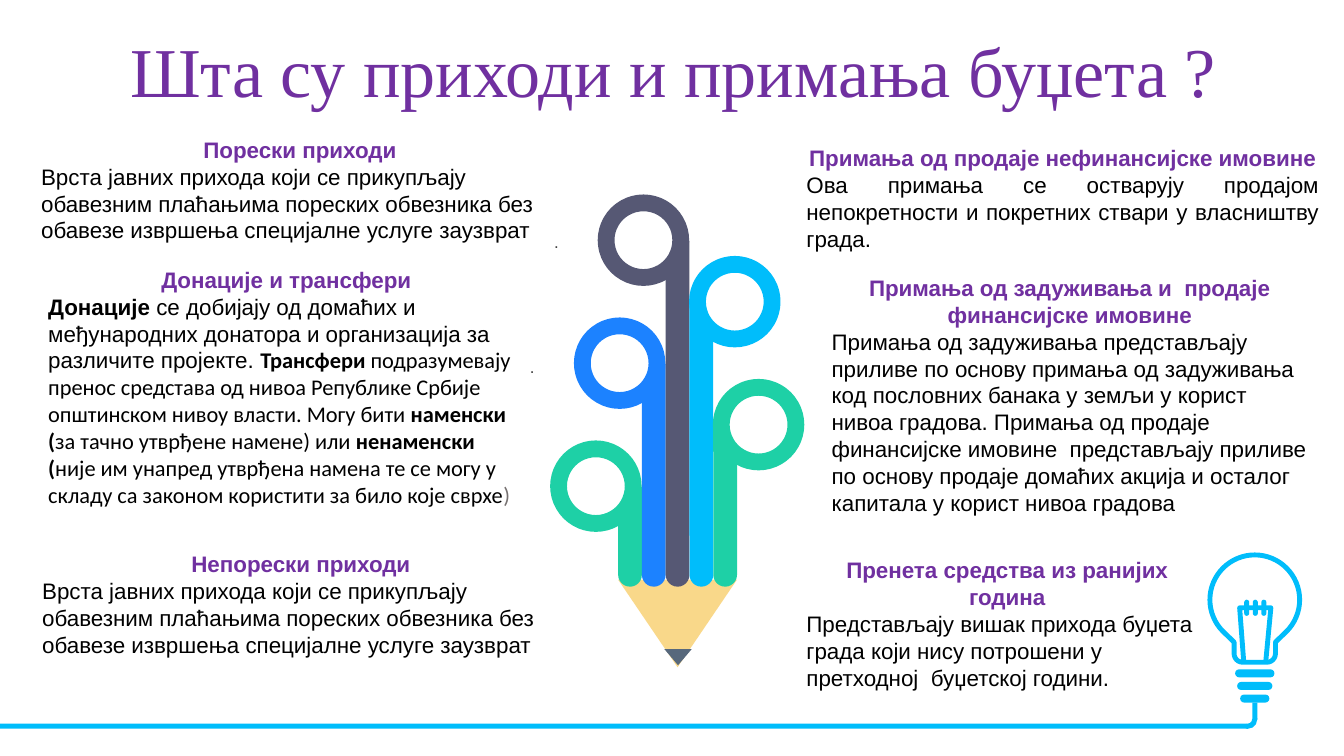
from dataclasses import dataclass
from math import cos, radians, sin

from lxml.etree import SubElement
from pptx import Presentation
from pptx.dml.color import RGBColor
from pptx.enum.shapes import MSO_SHAPE as Preset
from pptx.enum.text import MSO_ANCHOR as Anchor, PP_ALIGN as Align
from pptx.oxml.ns import qn
from pptx.util import Inches, Pt


@dataclass(frozen=True)
class Theme:
    purple: str = "7030A0"
    black: str = "000000"
    grey: str = "767171"
    dot: str = "404040"
    white: str = "FFFFFF"
    cyan: str = "00BDFB"
    blue: str = "1C82FF"
    green: str = "1ED0A6"
    slate: str = "565874"
    wood: str = "F5B317"
    lead: str = "57687C"
    title_font: str = "Times New Roman"
    body_font: str = "Arial"
    alt_font: str = "Calibri"
    title_size: float = 50
    body_size: float = 16
    dot_size: float = 12
    ring_width: float = 12
    bulb_width: float = 3.5


def write(para, text, font, size, color, bold=False):
    span = para.add_run()
    span.text = text
    span.font.name = font
    span.font.size = Pt(size)
    span.font.bold = bold
    span.font.color.rgb = RGBColor.from_string(color)


def arc(center_x, center_y, radius, start, end, steps):
    angles = [radians(start + (end - start) * i / steps) for i in range(steps + 1)]
    return [(center_x + radius * cos(a), center_y + radius * sin(a)) for a in angles]


class Painter:
    cell = Inches(0.1)

    def __init__(self, deck, theme):
        self.theme = theme
        self.page = deck.slides.add_slide(deck.slide_layouts[6])

    def grid(self, *cells):
        return [round(value * self.cell) for value in cells]

    def style(self, shape, fill=None, line=None, width=0):
        shape.shadow.inherit = False
        if fill:
            shape.fill.solid()
            shape.fill.fore_color.rgb = RGBColor.from_string(fill)
        else:
            shape.fill.background()
        if line:
            shape.line.color.rgb = RGBColor.from_string(line)
            shape.line.width = Pt(width)
        else:
            shape.line.fill.background()
        return shape

    def shape(self, preset, place, fill, line=None, width=0, turn=0, adjust=()):
        shape = self.page.shapes.add_shape(preset, *self.grid(*place))
        shape.rotation = turn
        for index, value in enumerate(adjust):
            shape.adjustments[index] = value
        return self.style(shape, fill, line, width)

    def outline(self, points, line, width, fill=None, close=True):
        start, *rest = [self.grid(*point) for point in points]
        builder = self.page.shapes.build_freeform(*start)
        builder.add_line_segments(rest, close=close)
        shape = self.style(builder.convert_to_shape(), fill, line, width)
        if not close:
            shape.line._get_or_add_ln().set("cap", "rnd")
        return shape

    def text(self, place, anchor=Anchor.TOP):
        box = self.page.shapes.add_textbox(*self.grid(*place))
        box.text_frame.word_wrap = True
        box.text_frame.vertical_anchor = anchor
        return box.text_frame

    def title(self, place, text):
        para = self.text(place, Anchor.MIDDLE).paragraphs[0]
        para.alignment = Align.CENTER
        para.line_spacing = 0.8
        write(para, text, self.theme.title_font, self.theme.title_size, self.theme.purple)

    def dot(self, place):
        para = self.text(place).paragraphs[0]
        para.alignment = Align.RIGHT
        write(para, ".", self.theme.body_font, self.theme.dot_size, self.theme.dot)

    def block(self, place, heading, spans, align=Align.LEFT):
        theme = self.theme
        frame = self.text(place)
        head = frame.paragraphs[0]
        head.alignment = Align.CENTER
        write(head, heading, theme.body_font, theme.body_size, theme.purple, bold=True)
        body = frame.add_paragraph()
        body.alignment = align
        for text, changes in spans:
            look = {"font": theme.body_font, "color": theme.black, **changes}
            write(body, text, size=theme.body_size, **look)

    def bulb(self):
        cyan = self.theme.cyan
        glass = (arc(124.45, 59.5, 4.45, 135, 405, 48) + [(126.5, 63.7)]
                 + arc(125.65, 64.85, 0.85, 0, 90, 6)
                 + arc(123.25, 64.85, 0.85, 90, 180, 6) + [(122.4, 63.7)])
        self.outline(glass, cyan, self.theme.bulb_width, fill=self.theme.white)
        for row, width in enumerate((3.9, 3.5, 2.9)):
            place = (124.45 - width / 2, 66.4 + 1.25 * row, width, 0.8)
            self.shape(Preset.ROUNDED_RECTANGLE, place, cyan, adjust=[0.5])
        filament = [(123.35, 65.55), (122.95, 60.3), (126.05, 60.3), (125.55, 65.55)]
        self.outline(filament, cyan, self.theme.bulb_width, close=False)
        for column in range(3):
            place = (123.4 + 0.85 * column, 59.5, 0.5, 1.6)
            self.shape(Preset.ROUNDED_RECTANGLE, place, cyan, adjust=[0.5])
        self.shape(Preset.RECTANGLE, (0, 71.8, 123.7, 0.5), cyan)
        self.shape(Preset.RECTANGLE, (124.2, 69.7, 0.5, 1.7), cyan)
        self.shape(Preset.BLOCK_ARC, (122.8, 70.4, 1.9, 1.9), cyan,
                   adjust=[213.39, 60.92, 0.27])

    def pencil(self):
        theme = self.theme
        left, bottom, bar, ring = 61.3, 58.2, 2.36, 7.4
        wood = self.shape(Preset.TRAPEZOID, (left, 57.5, 11.8, 8.7), theme.wood,
                          turn=180, adjust=[0.79])
        tint = wood.fill._xPr.find(qn("a:solidFill"))[0]
        SubElement(tint, qn("a:alpha"), val="50000")
        self.shape(Preset.ISOSCELES_TRIANGLE, (65.9, 64.4, 2.7, 1.6), theme.lead, turn=180)
        branches = [(theme.green, 48.3, -5.9), (theme.blue, 36.1, -5.9),
                    (theme.slate, 23.9, -5.9), (theme.cyan, 30, 0.8),
                    (theme.green, 42.2, 0.8)]
        for index, (color, top, shift) in enumerate(branches):
            column = left + index * bar
            self.shape(Preset.ROUND_2_SAME_RECTANGLE, (column, top, bar, bottom - top),
                       color, turn=180, adjust=[0.5, 0])
            self.shape(Preset.OVAL, (column + shift, top - 3.77, ring, ring),
                       theme.white, line=color, width=theme.ring_width)


def main():
    deck = Presentation()
    deck.slide_width, deck.slide_height = Inches(13.33), Inches(7.5)
    theme = Theme()
    painter = Painter(deck, theme)
    strong = {"bold": True}
    alt = {"font": theme.alt_font}
    alt_strong = {**alt, **strong}
    tax_text = [("Врста јавних прихода који се прикупљају обавезним плаћањима пореских "
                 "обвезника без обавезе извршења специјалне услуге заузврат", {})]

    painter.bulb()
    painter.title((3.5, 3.7, 126.6, 7.9), "Шта су приходи и примања буџета ?")
    painter.pencil()
    painter.dot((14.3, 22.5, 42.1, 3))
    painter.dot((11.9, 34.9, 42.1, 3))
    painter.block((3.1, 13, 53.3, 11.8), "Порески приходи", tax_text)
    painter.block((3.8, 25.9, 49.2, 28.3), "Донације и трансфери", [
        ("Донације ", strong),
        ("се добијају од домаћих и међународних донатора и организација за "
         "различите пројекте. ", {}),
        ("Трансфери", alt_strong),
        (" подразумевају пренос средстава од нивоа Републике Србије општинском "
         "нивоу власти. Могу бити ", alt),
        ("наменски (", alt_strong),
        ("за тачно утврђене намене) или ", alt),
        ("ненаменски (", alt_strong),
        ("није им унапред утврђена намена те се могу у складу са законом користити "
         "за било које сврхе", alt),
        (")", {**alt, "color": theme.grey})])
    painter.block((3.2, 54.1, 53.3, 12.1), "Непорески приходи", tax_text)
    painter.block((79, 13.8, 52.8, 11.8), "Примања од продаје нефинансијске имовине", [
        ("Ова примања се остварују продајом непокретности и покретних ствари "
         "у власништву града.", {})], Align.JUSTIFY)
    painter.block((81.5, 26.7, 49.2, 25.2),
                  "Примања од задуживања и  продаје финансијске имовине", [
        ("Примања од задуживања представљају приливе по основу примања од задуживања "
         "код пословних банака у земљи у корист нивоа градова. Примања од продаје "
         "финансијске имовине  представљају приливе по основу продаје домаћих акција "
         "и осталог капитала у корист нивоа градова", {})])
    painter.block((79, 54.7, 41.8, 14.5), "Пренета средства из ранијих година", [
        ("Представљају вишак прихода буџета града који нису потрошени у претходној  "
         "буџетској години.", {})])
    deck.save("out.pptx")


if __name__ == "__main__":
    main()
